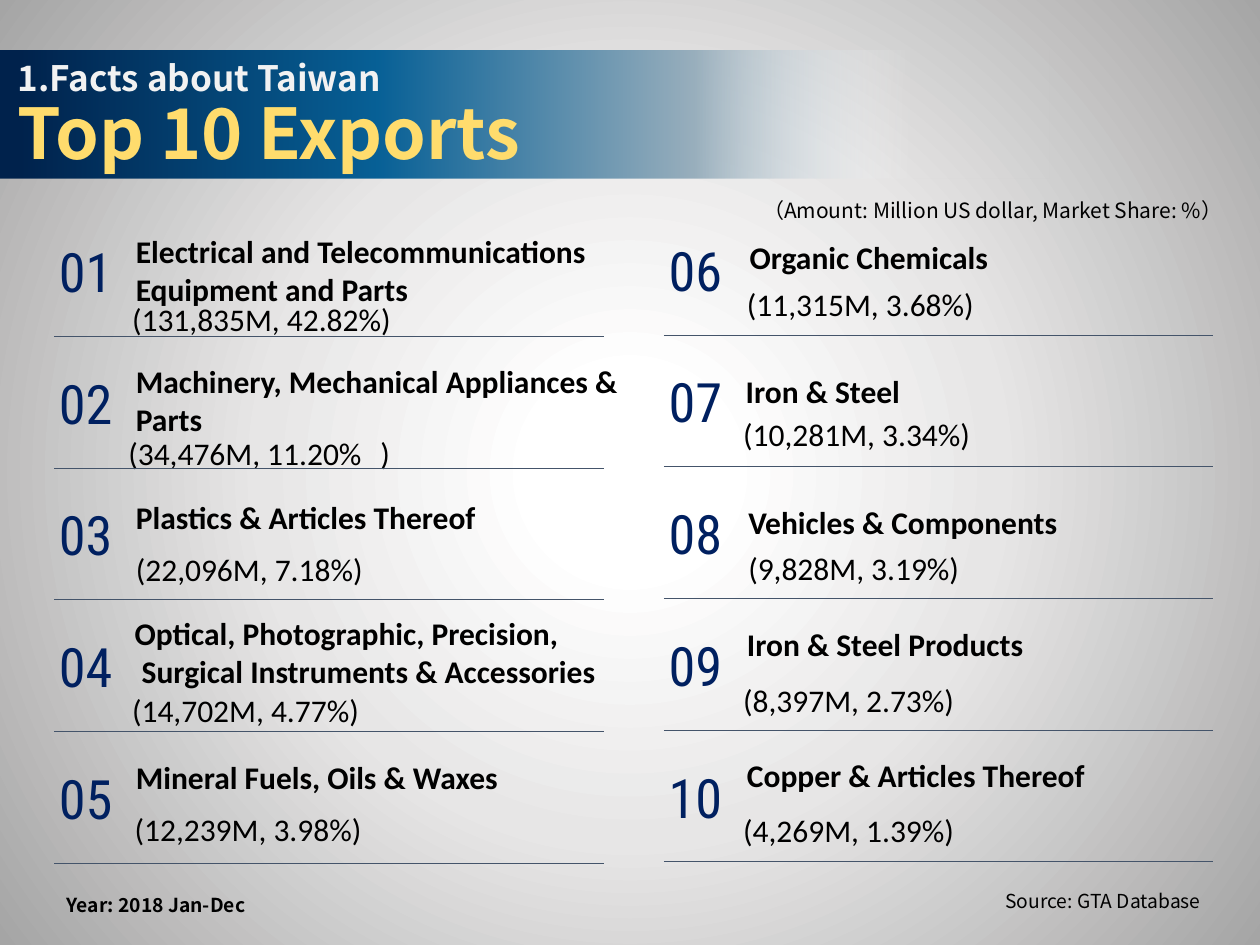
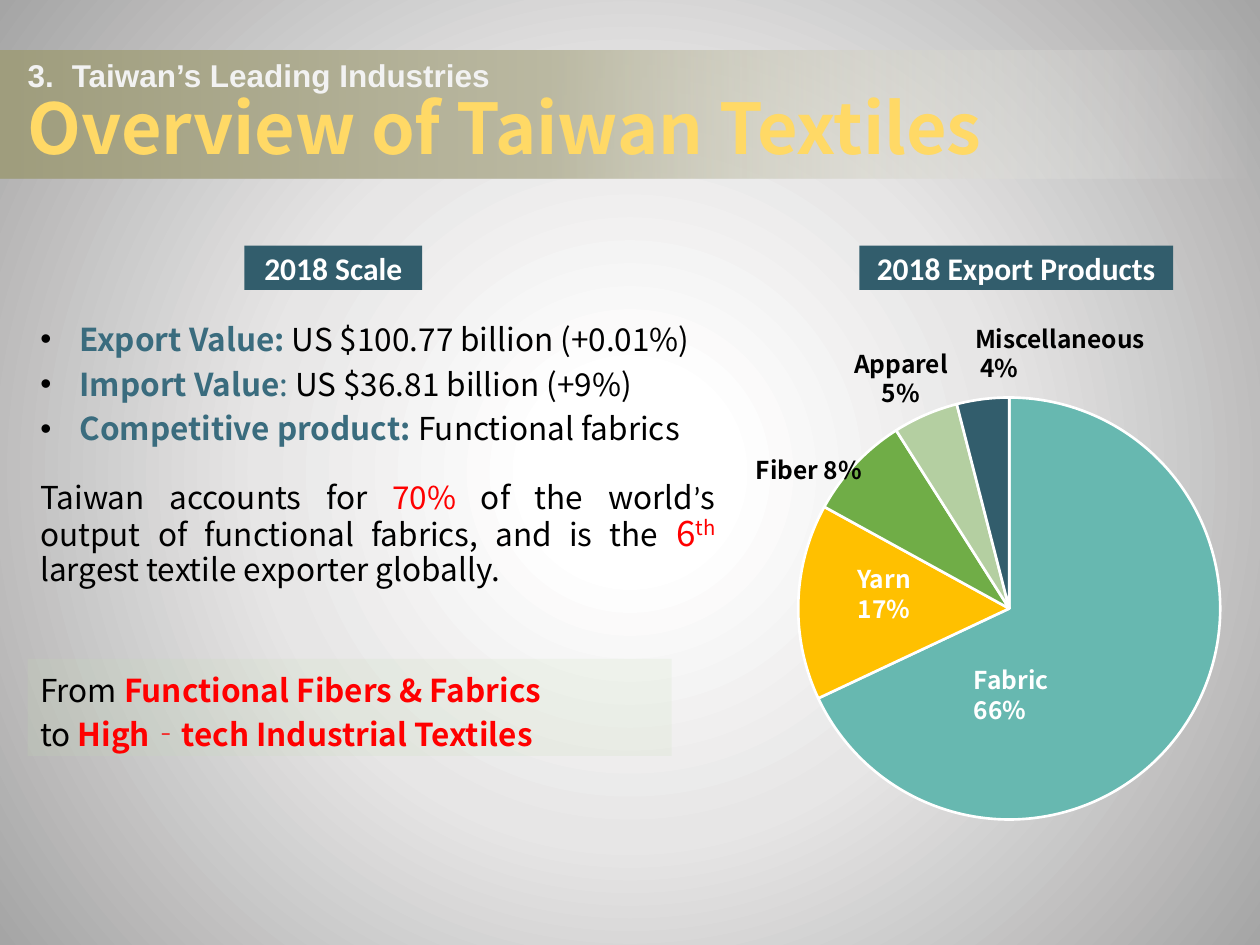
from copy import deepcopy

from pptx import Presentation
from pptx import util as u
from pptx.chart.data import CategoryChartData
from pptx.dml.color import RGBColor
from pptx.enum import chart as charts, shapes, text
from pptx.oxml.ns import qn
from lxml import etree

COLOURS = {
    "black": "000000", "white": "FFFFFF", "pale": "F2F2F2", "red": "FF0000",
    "gold": "FFDC6D", "amber": "FFD966", "rule": "44546A",
    "tag": "325D6C", "term": "3A6C7E", "highlight": "C5E0B4",
}
SLICES = ["67B8B0", "FFC000", "70AD47", "B4CFA1", "325D6C"]
# Gradient stops: position and opacity in percent
BACKDROP = [(12, "FFFFFF", 100), (47, "E7E6E6", 100), (100, "A5A5A5", 100)]
BLUE_BAND = [(2, "00224C", 100), (36, "076096", 100), (66, "98AEBC", 100), (87, "FFFFFF", 0)]
OLIVE_BAND = [(1, "9F9D7D", 100), (41, "BAB8A1", 100), (72, "DBDACF", 37), (94, "FFFFFF", 0)]
NUMERALS = [(12, "00224C", 100), (40, "002060", 100), (73, "0091C4", 100), (90, "4CFAE9", 100)]

SANS, SANS_TC = "Noto Sans CJK SC", "Noto Sans CJK TC"
BODY, NARROW = "Calibri", "Roboto Condensed"
ALIGN = text.PP_ALIGN

# label lines, value, label offset and value offset from the corner of the cell
EXPORTS = [
    (["Electrical and Telecommunications", "Equipment and Parts"],
     "(131,835M, 42.82%)", (0.55, -0.09), (0.52, 0.39)),
    (["Machinery, Mechanical Appliances &", "Parts"],
     "(34,476M, 11.20%\t)", (0.55, -0.1), (0.49, 0.41)),
    (["Plastics & Articles Thereof"], "(22,096M, 7.18%)", (0.55, -0.07), (0.55, 0.29)),
    (["Optical, Photographic, Precision,", " Surgical Instruments & Accessories"],
     "(14,702M, 4.77%)", (0.54, -0.19), (0.52, 0.36)),
    (["Mineral Fuels, Oils & Waxes"], "(12,239M, 3.98%)", (0.55, -0.09), (0.54, 0.26)),
    (["Organic Chemicals"], "(11,315M, 3.68%)", (0.58, -0.03), (0.56, 0.28)),
    (["Iron & Steel"], "(10,281M, 3.34%)", (0.55, -0.01), (0.53, 0.27)),
    (["Vehicles & Components"], "(9,828M, 3.19%)", (0.57, -0.02), (0.57, 0.29)),
    (["Iron & Steel Products"], "(8,397M, 2.73%)", (0.56, -0.09), (0.53, 0.29)),
    (["Copper & Articles Thereof"], "(4,269M, 1.39%)", (0.56, -0.1), (0.53, 0.28)),
]


def rgb(name):
    return RGBColor.from_string(COLOURS[name])


def place(box):
    return [u.Inches(length) for length in box]


def set_gradient(fill, owner, stops, angle=None):
    """Give the fill found in owner these stops; radial when there is no angle."""
    fill.gradient()
    grad = next(owner.iter(qn("a:gradFill")))
    for child in list(grad):
        grad.remove(child)
    stop_list = etree.SubElement(grad, qn("a:gsLst"))
    for position, colour, opacity in stops:
        stop = etree.SubElement(stop_list, qn("a:gs"), pos=str(position * 1000))
        tint = etree.SubElement(stop, qn("a:srgbClr"), val=colour)
        if opacity < 100:
            etree.SubElement(tint, qn("a:alpha"), val=str(opacity * 1000))
    if angle is None:
        route = etree.SubElement(grad, qn("a:path"), path="circle")
        etree.SubElement(route, qn("a:fillToRect"), l="50000", t="50000", r="50000", b="50000")
    else:
        etree.SubElement(grad, qn("a:lin"), ang=str(angle * 60000), scaled="0")


def style(span, size, font, colour="black", bold=False):
    span.font.size = u.Pt(size)
    span.font.name = font
    span.font.bold = bold
    span.font.color.rgb = rgb(colour)


def write(frame, lines, size, font, colour="black", bold=False, align=ALIGN.LEFT):
    """Fill the frame with lines, each a string or a list of (text, style changes)."""
    frame.auto_size = text.MSO_AUTO_SIZE.NONE
    for index, line in enumerate(lines):
        para = frame.paragraphs[0] if index == 0 else frame.add_paragraph()
        para.alignment = align
        for wording, changes in [(line, {})] if isinstance(line, str) else line:
            span = para.add_run()
            span.text = wording
            style(span, **{"size": size, "font": font, "colour": colour, "bold": bold, **changes})
    return frame.paragraphs


def add_text(page, box, lines, size, font, wrap=True, anchor=text.MSO_ANCHOR.TOP, **look):
    frame = page.shapes.add_textbox(*place(box)).text_frame
    frame.word_wrap = wrap
    frame.vertical_anchor = anchor
    return write(frame, lines, size, font, **look)


def add_panel(page, box, colour=None):
    panel = page.shapes.add_shape(shapes.MSO_SHAPE.RECTANGLE, *place(box))
    panel.shadow.inherit = False
    panel.line.fill.background()
    if colour:
        panel.fill.solid()
        panel.fill.fore_color.rgb = rgb(colour)
    return panel


def set_indent(para, left, first=0):
    props = para._p.get_or_add_pPr()
    props.set("marL", str(u.Inches(left)))
    props.set("indent", str(u.Inches(first)))
    return props


def add_header(page, box, stops, band_width, section, heading, section_look, heading_look):
    """Put a gradient band behind a two-line title."""
    band = add_panel(page, (0, 0.4, band_width, 1.02))
    set_gradient(band.fill, band._element, stops, 0)
    page.shapes._spTree.insert(2, band._element)
    title = page.shapes.title
    title.left, title.top, title.width, title.height = place(box)
    frame = title.text_frame
    frame.auto_size = text.MSO_AUTO_SIZE.NONE
    frame.vertical_anchor = text.MSO_ANCHOR.MIDDLE
    para = frame.paragraphs[0]
    para.text = f"{section}\v{heading}"
    tabs = etree.SubElement(para._p.get_or_add_pPr(), qn("a:tabLst"))
    etree.SubElement(tabs, qn("a:tab"), pos=str(u.Inches(0.35)), algn="l")
    para.alignment = ALIGN.LEFT
    para.line_spacing = 0.9
    for span, look in zip(para.runs, (section_look, heading_look)):
        style(span, bold=True, **look)
    para._p.find(qn("a:br")).insert(0, deepcopy(para.runs[0].font._element))


def add_export(page, left, top, rank, labels, value, label_offset, value_offset):
    number = add_text(page, (left, top, 0.5, 0.54), [f"{rank:02}"], 31, NARROW, wrap=False,
                      anchor=text.MSO_ANCHOR.MIDDLE, align=ALIGN.CENTER)[0].runs[0]
    set_gradient(number.font.fill, number.font._element, NUMERALS, 320)
    dx, dy = label_offset
    add_text(page, (left + dx, top + dy, 3.79, 0.68), labels, 18, BODY, wrap=False, bold=True)
    dx, dy = value_offset
    amount = add_text(page, (left + dx, top + dy, 3.79, 0.32), [value], 18, BODY)[0]
    amount.line_spacing = 1.2
    rule_y = top + 0.79
    rule = page.shapes.add_connector(shapes.MSO_CONNECTOR.STRAIGHT,
                                     *place((left, rule_y, left + 4.36, rule_y)))
    rule.line.color.rgb = rgb("rule")
    rule.line.width = u.Pt(0.5)
    etree.SubElement(rule._element.spPr, qn("a:effectLst"))


def build_exports(deck):
    page = deck.slides.add_slide(deck.slide_layouts[5])
    add_header(page, (0.04, 0.43, 8.62, 1.02), BLUE_BAND, 8.33,
               "1.Facts about Taiwan", "Top 10 Exports",
               {"size": 20, "font": SANS_TC, "colour": "pale"},
               {"size": 40, "font": SANS_TC, "colour": "gold"})
    pitch = (6.06 - 1.88) / 4
    for index, export in enumerate(EXPORTS):
        column, row = divmod(index, 5)
        add_export(page, 0.43 + 4.84 * column, 1.88 - 0.01 * column + pitch * row,
                   index + 1, *export)
    add_text(page, (5.87, 1.52, 4.02, 0.3), ["（Amount: Million US dollar, Market Share: %）"],
             12, SANS, wrap=False, align=ALIGN.CENTER)
    add_text(page, (7.88, 7.01, 1.92, 0.42), ["Source: GTA Database"], 11, SANS)
    add_text(page, (0.43, 7.04, 2.49, 0.29), ["Year: 2018 Jan-Dec"], 11, SANS, bold=True)


def add_tag(page, box, wording):
    frame = add_panel(page, box, "tag").text_frame
    frame.vertical_anchor = text.MSO_ANCHOR.MIDDLE
    frame.word_wrap = False
    write(frame, [wording], 18, BODY, colour="white", bold=True, align=ALIGN.CENTER)


def add_facts(page, box):
    body = page.placeholders[1]
    body.left, body.top, body.width, body.height = place(box)
    term, red = {"colour": "term", "bold": True}, {"colour": "red"}
    *facts, summary = write(body.text_frame, [
        [("Export Value: ", term), ("US $100.77 billion (+0.01%)", {})],
        [("Import Value", term), (": ", {"colour": "term"}), ("US $36.81 billion (+9%)", {})],
        [("Competitive product: ", term), ("Functional fabrics", {})],
        [("Taiwan accounts for ", {}), ("70% ", red), ("of the world", {}),
         ("’", {"font": BODY}), ("s output of functional fabrics, and is the ", {}),
         ("6", {"size": 20, **red}), ("th ", {"size": 20, **red}),
         ("largest textile exporter globally.", {})],
    ], 18, SANS)
    for index, para in enumerate(facts):
        props = set_indent(para, 0.31, -0.31)
        bullet_colour = etree.SubElement(props, qn("a:buClr"))
        etree.SubElement(bullet_colour, qn("a:srgbClr"), val=COLOURS["black"])
        etree.SubElement(props, qn("a:buChar"), char="•")
        para.line_spacing = u.Pt(16.5)
        para.space_before = u.Pt(9 if index else 0)
    etree.SubElement(set_indent(summary, 0), qn("a:buNone"))
    summary.alignment = ALIGN.JUSTIFY
    summary.line_spacing = 0.9
    summary.space_before = u.Pt(20)
    summary.runs[6].font._element.set("baseline", "30000")


def add_highlight(page, box):
    panel = add_panel(page, box, "highlight")
    tint = next(panel._element.spPr.iter(qn("a:srgbClr")))
    etree.SubElement(tint, qn("a:alpha"), val="16000")
    panel.text_frame.vertical_anchor = text.MSO_ANCHOR.TOP
    strong = {"colour": "red", "bold": True}
    for para in write(panel.text_frame, [
        [("From ", {}), ("Functional Fibers & Fabrics", strong)],
        [("to ", {}), ("High‐tech Industrial Textiles", strong)],
    ], 18, SANS):
        para.line_spacing = u.Pt(25)


def add_product_pie(page, box):
    left, top, width, height = box
    data = CategoryChartData()
    data.categories = ["1", "2", "3", "4", "5"]
    data.add_series("Series 1", [68, 15, 8, 5, 4])
    chart = page.shapes.add_chart(charts.XL_CHART_TYPE.PIE, *place(box), data).chart
    chart.has_legend = chart.has_title = False
    chart.font.size = u.Pt(10)
    chart.font.name = BODY
    chart.font.color.rgb = rgb("black")
    plot = chart.plots[0]
    plot.vary_by_categories = True
    for index, colour in enumerate(SLICES):
        form = plot.series[0].points[index].format
        form.fill.solid()
        form.fill.fore_color.rgb = RGBColor.from_string(colour)
        form.line.color.rgb = rgb("white")
        form.line.width = u.Pt(1.5)
    plot_area = chart._chartSpace.chart.plotArea
    for old in plot_area.findall(qn("c:layout")):
        plot_area.remove(old)
    layout = etree.Element(qn("c:layout"))
    plot_area.insert(0, layout)
    manual = etree.SubElement(layout, qn("c:manualLayout"))
    diameter = 3.35
    share_w, share_h = diameter / width, diameter / height
    for key, value in [("layoutTarget", "inner"), ("xMode", "edge"), ("yMode", "edge"),
                       ("x", (1 - share_w) / 2), ("y", (1 - share_h) / 2),
                       ("w", share_w), ("h", share_h)]:
        etree.SubElement(manual, qn(f"c:{key}"), val=str(value))

    # label lines, offset and size, colour, indent of the last line
    for lines, (dx, dy, label_w, label_h), colour, indent in [
        (["Fabric 66%"], (2.24, 2.21, 1.15, 0.83), "white", 0),
        (["Yarn 17%"], (1.32, 1.41, 0.92, 0.83), "white", 0),
        (["Fiber 8%"], (0.51, 0.54, 1.41, 0.49), "black", 0),
        (["Apparel", "5%"], (1.29, -0.3, 1.41, 0.83), "black", 0.22),
        (["Miscellaneous", "4%"], (2.25, -0.5, 2.03, 0.83), "black", 0.04),
    ]:
        paras = add_text(page, (left + dx, top + dy, label_w, label_h), lines, 14, SANS,
                         colour=colour, bold=True)
        set_indent(paras[-1], indent)


def build_textiles(deck):
    page = deck.slides.add_slide(deck.slide_layouts[1])
    add_header(page, (0.12, 0.4, 9.76, 1.02), OLIVE_BAND, 10.56,
               "3.\tTaiwan’s Leading Industries", "Overview of Taiwan Textiles",
               {"size": 18, "font": "Arial", "colour": "pale"},
               {"size": 40, "font": SANS, "colour": "amber"})
    add_tag(page, (1.94, 1.95, 1.41, 0.35), "2018 Scale")
    add_tag(page, (6.82, 1.95, 2.49, 0.35), "2018 Export Products")
    add_highlight(page, (0.22, 5.23, 5.11, 0.77))
    add_facts(page, (0.22, 2.56, 5.56, 2.31))
    add_product_pie(page, (5.39, 3.02, 5.24, 3.62))


def main():
    deck = Presentation()
    deck.slide_width, deck.slide_height = u.Inches(10), u.Inches(7.5)
    master = deck.slide_master
    set_gradient(master.background.fill, master._element, BACKDROP)
    build_exports(deck)
    build_textiles(deck)
    deck.save("out.pptx")


if __name__ == "__main__":
    main()
